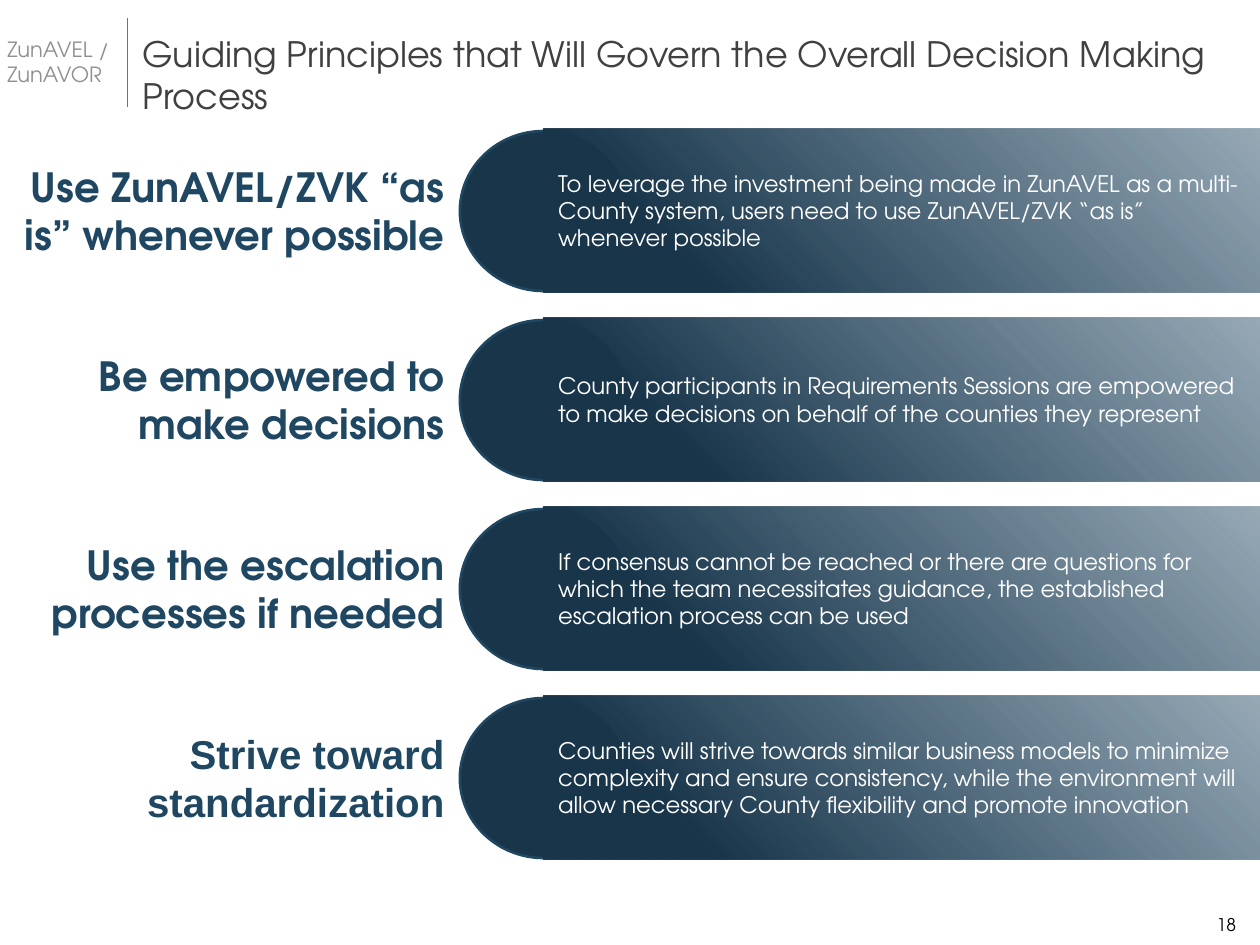
"""Builds the slide of guiding principles for decision making."""
from dataclasses import dataclass
from typing import Any

from lxml import etree
from pptx import Presentation
from pptx.dml.color import RGBColor
from pptx.enum.shapes import MSO_CONNECTOR as CONN, MSO_SHAPE as SHAPE
from pptx.enum.text import MSO_ANCHOR as ANCHOR, PP_ALIGN as ALIGN
from pptx.oxml import parse_xml
from pptx.oxml.ns import nsdecls, qn
from pptx.util import Inches, Pt


@dataclass(frozen=True)
class Theme:
    font: str = "TeX Gyre Adventor"
    fallback: str = "Arial"
    navy: str = "18354A"
    blue: str = "204762"
    title: str = "404040"
    brand: str = "909090"
    rule: str = "767171"
    white: str = "FFFFFF"
    black: str = "000000"
    title_size: int = 20
    label_size: int = 23
    body_size: int = 13
    brand_size: int = 12
    number_size: int = 10


@dataclass(frozen=True)
class Box:
    left: float
    top: float
    width: float
    height: float

    def emu(self) -> list[int]:
        return [Inches(v) for v in (self.left, self.top, self.width, self.height)]


@dataclass(frozen=True)
class Principle:
    label: str
    detail: str
    font: str


T = Theme()
FIRST_TOP, PITCH, BAND_HEIGHT = 1.02, 1.5, 1.3
PRINCIPLES = [
    Principle("Use ZunAVEL/ZVK “as is” whenever possible",
              "To leverage the investment being made in ZunAVEL as a multi-County system, "
              "users need to use ZunAVEL/ZVK “as is” whenever possible", T.font),
    Principle("Be empowered to make decisions",
              "County participants in Requirements Sessions are empowered to make decisions "
              "on behalf of the counties they represent", T.font),
    Principle("Use the escalation processes if needed",
              "If consensus cannot be reached or there are questions for which the team "
              "necessitates guidance, the established escalation process can be used", T.font),
    Principle("Strive toward standardization",
              "Counties will strive towards similar business models to minimize complexity and "
              "ensure consistency, while the environment will allow necessary County "
              "flexibility and promote innovation", T.fallback),
]


def write(sp: Any, lines: list[str], size: int, color: str, font: str = T.font,
          bold: bool = False, align: Any = ALIGN.LEFT, anchor: Any = ANCHOR.MIDDLE,
          insets: tuple[float, float] = (0.1, 0.05), wrap: bool = True) -> None:
    """Fill a shape with uniformly formatted paragraphs."""
    tf = sp.text_frame
    x, y = map(Inches, insets)
    frame = dict(word_wrap=wrap, vertical_anchor=anchor, margin_left=x, margin_right=x,
                 margin_top=y, margin_bottom=y)
    for name, value in frame.items():
        setattr(tf, name, value)
    for i, line in enumerate(lines):
        p = tf.paragraphs[0] if i == 0 else tf.add_paragraph()
        p.alignment = align
        r = p.add_run()
        r.text = line
        for name, value in dict(name=font, size=Pt(size), bold=bold).items():
            setattr(r.font, name, value)
        r.font.color.rgb = RGBColor.from_string(color)


def add_text(s: Any, box: Box, lines: list[str], size: int, color: str, **fmt: Any) -> None:
    """Add a text box."""
    write(s.shapes.add_textbox(*box.emu()), lines, size, color, **fmt)


def add_rule(s: Any, x: float, top: float, bottom: float) -> None:
    """Add the thin vertical rule of the header."""
    c = s.shapes.add_connector(CONN.STRAIGHT, Inches(x), Inches(top), Inches(x), Inches(bottom))
    c.line.color.rgb = RGBColor.from_string(T.rule)
    c.line.width = Pt(0.5)
    etree.SubElement(c._element.spPr, qn("a:effectLst"))


def add_cap(s: Any, box: Box) -> None:
    """Add the round end of a band."""
    sp = s.shapes.add_shape(SHAPE.OVAL, *box.emu())
    sp.shadow.inherit = False
    sp.fill.solid()
    sp.fill.fore_color.rgb = RGBColor.from_string(T.navy)
    sp.line.color.rgb = RGBColor.from_string(T.blue)
    sp.line.width = Pt(1.5)


def add_band(s: Any, box: Box, detail: str) -> None:
    """Add a band that fades out from its lower left corner."""
    sp = s.shapes.add_shape(SHAPE.RECTANGLE, *box.emu())
    sp.shadow.inherit = False
    sp.line.fill.background()
    sp._element.spPr.find(qn("a:prstGeom")).addnext(parse_xml(
        f'<a:gradFill {nsdecls("a")} rotWithShape="1"><a:gsLst>'
        f'<a:gs pos="19000"><a:srgbClr val="{T.navy}"/></a:gs>'
        f'<a:gs pos="100000"><a:srgbClr val="{T.blue}"><a:alpha val="46000"/></a:srgbClr></a:gs>'
        '</a:gsLst><a:path path="circle"><a:fillToRect t="100000" r="100000"/></a:path>'
        '</a:gradFill>'))
    write(sp, [detail], T.body_size, T.white, insets=(0.12, 0.07))


def add_principle(s: Any, top: float, item: Principle) -> None:
    """Add one row: cap, band and label."""
    add_cap(s, Box(3.65, top + 0.02, 1.33, 1.27))
    add_band(s, Box(4.31, top, 5.69, BAND_HEIGHT), item.detail)
    add_text(s, Box(-0.08, top + 0.21, 3.71, 0.88), [item.label], T.label_size, T.blue,
             font=item.font, bold=True, align=ALIGN.RIGHT)


def main() -> None:
    """Build and save the slide."""
    prs = Presentation()
    prs.slide_width, prs.slide_height = Inches(10), Inches(7.5)
    s = prs.slides.add_slide(prs.slide_layouts[6])
    add_rule(s, 1.01, 0.14, 0.85)
    add_text(s, Box(-0.04, 0.24, 1.17, 0.5), ["ZunAVEL /", "ZunAVOR"], T.brand_size, T.brand)
    add_text(s, Box(9.64, 7.25, 0.17, 0.17), ["18"], T.number_size, T.black,
             align=ALIGN.RIGHT, anchor=ANCHOR.BOTTOM, insets=(0, 0), wrap=False)
    add_text(s, Box(1.13, 0.26, 8.68, 0.34),
             ["Guiding Principles that Will Govern the Overall Decision Making Process"],
             T.title_size, T.title, anchor=ANCHOR.TOP, insets=(0, 0))
    for i, item in enumerate(PRINCIPLES):
        add_principle(s, FIRST_TOP + i * PITCH, item)
    prs.save("out.pptx")


if __name__ == "__main__":
    main()
